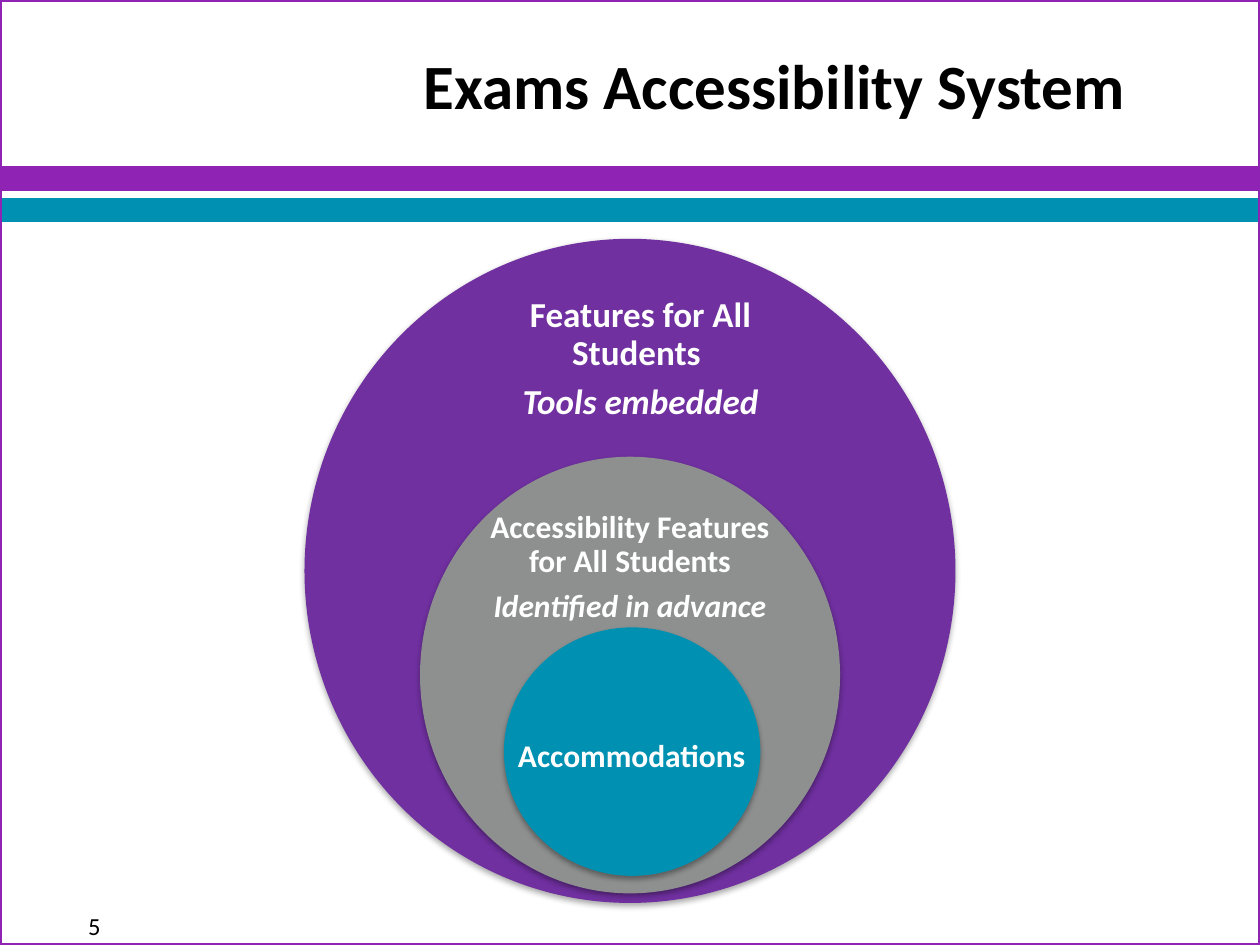
from dataclasses import dataclass

import lxml.etree
import pptx
import pptx.dml.color
import pptx.enum.shapes
import pptx.enum.text
import pptx.oxml.ns
import pptx.util

Pt = pptx.util.Pt
SHAPE = pptx.enum.shapes.MSO_SHAPE
ALIGN = pptx.enum.text.PP_ALIGN
ANCHOR = pptx.enum.text.MSO_ANCHOR
qn = pptx.oxml.ns.qn


@dataclass(frozen=True)
class Theme:
    font: str = "Calibri"
    black: str = "000000"
    white: str = "FFFFFF"
    violet: str = "8F23B3"
    purple: str = "7030A0"
    grey: str = "8E908F"
    teal: str = "0091B2"
    title: float = 36
    outer: float = 20
    inner: float = 18
    number: float = 14


@dataclass(frozen=True)
class Box:
    left: float
    top: float
    width: float
    height: float

    def lengths(self) -> list:
        return [Pt(v) for v in (self.left, self.top, self.width, self.height)]


@dataclass(frozen=True)
class Bar:
    top: float
    color: str


@dataclass(frozen=True)
class Circle:
    box: Box
    color: str
    label_box: Box
    label: str
    note: str
    size: float
    inset: float
    space_after: float


THEME = Theme()
WIDTH, HEIGHT = 720, 540
BARS = [Bar(96, THEME.violet), Bar(114, THEME.teal)]
CIRCLES = [
    Circle(Box(174, 136.5, 372, 379.5), THEME.purple, Box(264, 177, 204, 57),
           "Features for All Students ", "Tools embedded", THEME.outer, 7.2, 6.7),
    Circle(Box(240, 261, 240, 249.5), THEME.grey, Box(264, 301, 192, 47),
           "Accessibility Features for All Students", "Identified in advance",
           THEME.inner, 6.5, 5.9),
    Circle(Box(288, 358.5, 146.5, 142), THEME.teal, Box(282, 397.5, 162, 70.5),
           "Accommodations ", "", THEME.inner, 6.5, 5),
]


def rgb(color: str):
    return pptx.dml.color.RGBColor.from_string(color)


def add_shape(s, kind, box: Box, fill: str = "", line: str = "", weight: float = 0):
    sp = s.shapes.add_shape(kind, *box.lengths())
    sp.shadow.inherit = False
    if fill:
        sp.fill.solid()
        sp.fill.fore_color.rgb = rgb(fill)
    else:
        sp.fill.background()
    if line:
        sp.line.color.rgb = rgb(line)
        sp.line.width = Pt(weight)
    else:
        sp.line.fill.background()
    return sp


def add_shadow(sp) -> None:
    effects = sp._element.spPr.find(qn("a:effectLst"))
    shadow = lxml.etree.SubElement(
        effects, qn("a:outerShdw"), blurRad=str(Pt(3.1)), dist=str(Pt(1.8)),
        dir="5400000", rotWithShape="0")
    color = lxml.etree.SubElement(shadow, qn("a:srgbClr"), val=THEME.black)
    lxml.etree.SubElement(color, qn("a:alpha"), val="35000")


def add_text(s, box: Box, lines: list[str], size: float, color: str,
             bold: bool = False, align=ALIGN.CENTER, anchor=ANCHOR.MIDDLE,
             inset_x: float = 7.2, inset_y: float = 3.6):
    tf = s.shapes.add_textbox(*box.lengths()).text_frame
    tf.word_wrap = True
    tf.vertical_anchor = anchor
    tf.margin_left = tf.margin_right = Pt(inset_x)
    tf.margin_top = tf.margin_bottom = Pt(inset_y)
    tf.text = "\n".join(lines)
    for p in tf.paragraphs:
        p.alignment = align
        for r in p.runs:
            r.font.name = THEME.font
            r.font.size = Pt(size)
            r.font.bold = bold
            r.font.color.rgb = rgb(color)
    return tf


def add_circle(s, circle: Circle) -> None:
    add_shadow(add_shape(s, SHAPE.OVAL, circle.box, circle.color))
    lines = [text for text in (circle.label, circle.note) if text]
    tf = add_text(s, circle.label_box, lines, circle.size, THEME.white, bold=True,
                  inset_x=circle.inset, inset_y=circle.inset)
    for p in tf.paragraphs:
        p.line_spacing = 0.9
        p.space_after = Pt(circle.space_after)
    for p in tf.paragraphs[1:]:
        p.runs[0].font.italic = True


def main() -> None:
    prs = pptx.Presentation()
    prs.slide_width, prs.slide_height = Pt(WIDTH), Pt(HEIGHT)
    s = prs.slides.add_slide(prs.slide_layouts[6])
    for bar in BARS:
        add_shape(s, SHAPE.RECTANGLE, Box(0, bar.top, WIDTH, 12), bar.color, bar.color, 2)
    add_shape(s, SHAPE.RECTANGLE, Box(0, 0, WIDTH, HEIGHT), line=THEME.violet, weight=2.25)
    title = add_text(s, Box(222, 0, 528, 96), ["Exams Accessibility System"],
                     THEME.title, THEME.black, bold=True, align=ALIGN.LEFT)
    title.margin_left = Pt(20)
    add_text(s, Box(30, 517, 48, 23), ["5"], THEME.number, THEME.black, anchor=ANCHOR.TOP)
    for circle in CIRCLES:
        add_circle(s, circle)
    prs.save("out.pptx")


if __name__ == "__main__":
    main()
